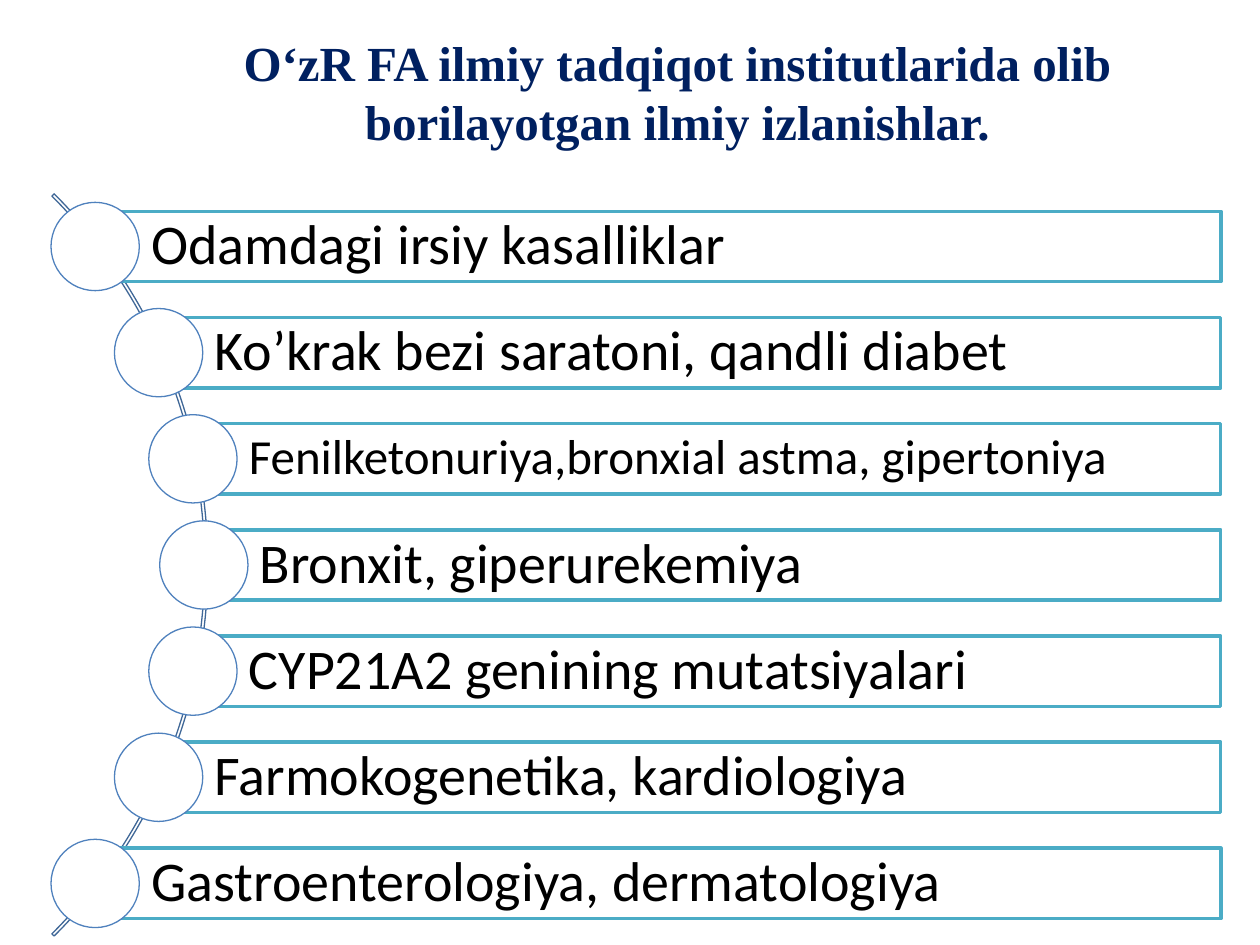
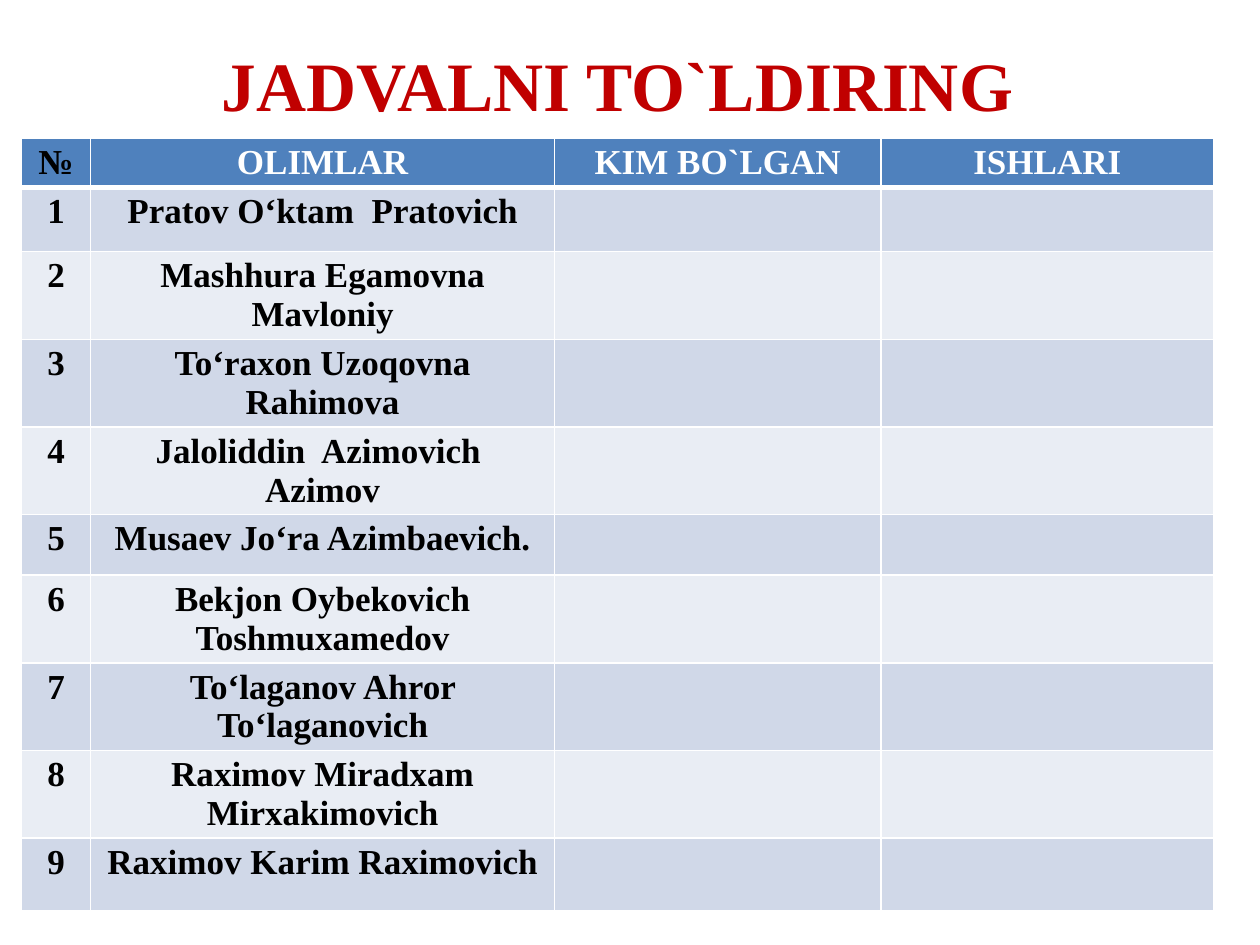
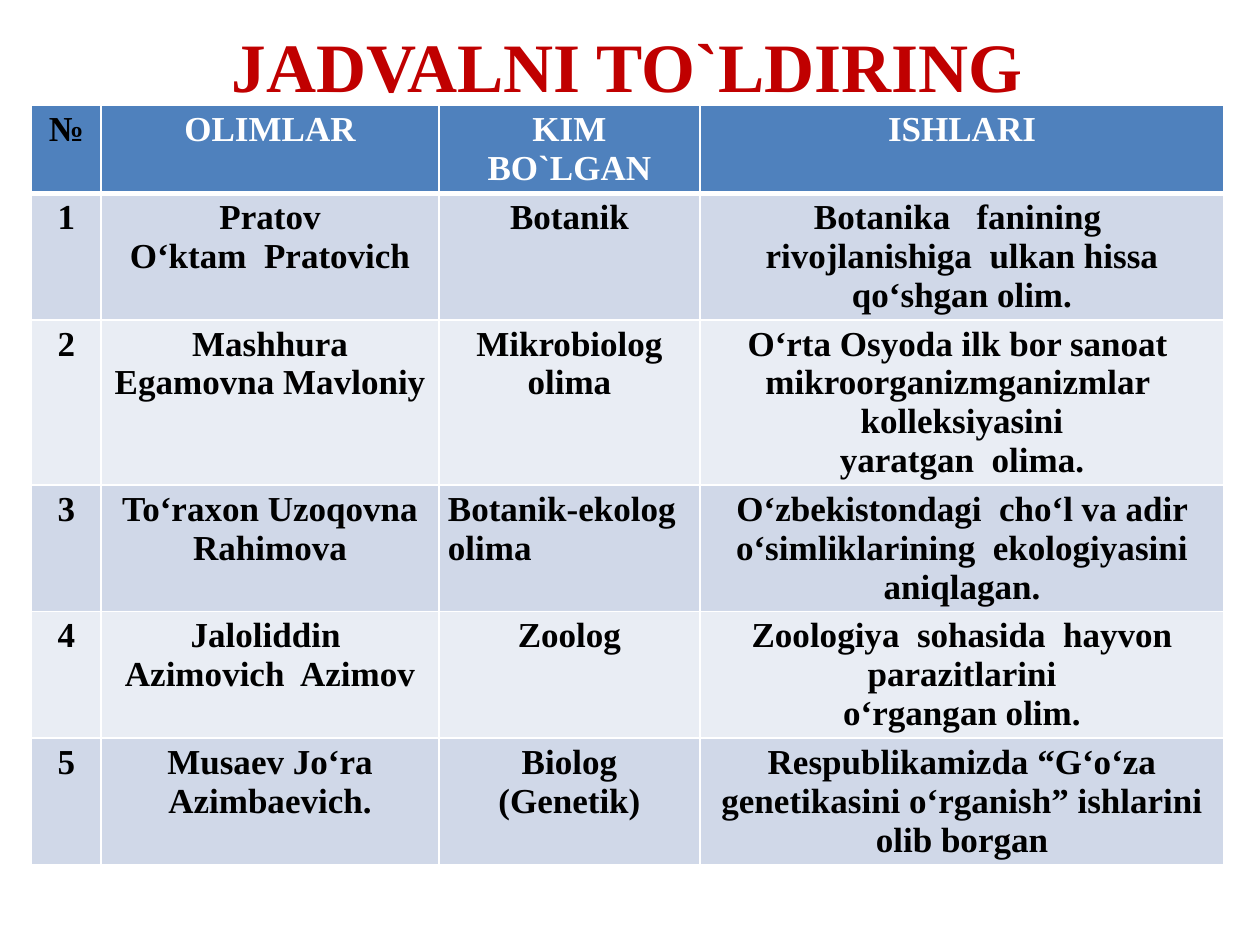
import math

import pptx
import pptx.dml.color
import pptx.enum.shapes
import pptx.enum.text
import pptx.oxml
import pptx.oxml.ns
import pptx.util

Cm = pptx.util.Cm
Pt = pptx.util.Pt
SHAPE = pptx.enum.shapes.MSO_SHAPE
ALIGN = pptx.enum.text.PP_ALIGN
MIDDLE = pptx.enum.text.MSO_ANCHOR.MIDDLE

WHITE, BLACK, NAVY, RED = "FFFFFF", "000000", "002060", "C00000"
HEADER_BLUE, BANDS = "4F81BD", ("D0D8E8", "E9EDF4")
BAR_LINE, ARC_LINE = "4BACC6", "3F6797"
SERIF, SANS = "Times New Roman", "Calibri"

TABLE_TITLE = "JADVALNI TO`LDIRING"
HEADINGS = ("№", "OLIMLAR", "KIM BO`LGAN", "ISHLARI")
TOPICS = (
    "Odamdagi irsiy kasalliklar",
    "Ko’krak bezi saratoni, qandli diabet",
    "Fenilketonuriya,bronxial astma, gipertoniya",
    "Bronxit, giperurekemiya",
    "CYP21A2 genining mutatsiyalari",
    "Farmokogenetika, kardiologiya",
    "Gastroenterologiya, dermatologiya",
)
SCHOLARS = (
    "Pratov O‘ktam  Pratovich",
    "Mashhura Egamovna Mavloniy",
    "To‘raxon Uzoqovna Rahimova",
    "Jaloliddin  Azimovich  Azimov",
    "Musaev Jo‘ra Azimbaevich.",
    "Bekjon Oybekovich Toshmuxamedov",
    "To‘laganov Ahror To‘laganovich",
    "Raximov Miradxam Mirxakimovich",
    "Raximov Karim Raximovich",
)
NARROW_SCHOLARS = ("Pratov\nO‘ktam  Pratovich", *SCHOLARS[1:5])
PROFESSIONS = (
    "Botanik",
    "Mikrobiolog olima",
    "Botanik-ekolog  olima",
    "Zoolog",
    "Biolog (Genetik)",
)
WORKS = (
    "Botanika   fanining  rivojlanishiga  ulkan hissa qo‘shgan olim.",
    "O‘rta Osyoda ilk bor sanoat  mikroorganizmganizmlar  kolleksiyasini\n"
    "yaratgan  olima.",
    "O‘zbekistondagi  cho‘l va adir o‘simliklarining  ekologiyasini aniqlagan.",
    "Zoologiya  sohasida  hayvon parazitlarini\no‘rgangan olim.",
    "Respublikamizda “G‘o‘za genetikasini o‘rganish” ishlarini olib borgan",
)

# Topic list geometry in centimetres: circle centres lie on one arc.
ARC_X, ARC_Y, ARC_RADIUS, ARC_SIZE = -6.39, 11.39, 10.5, 21.16
TOPIC_STEP, CIRCLE, BAR_HEIGHT, BAR_RIGHT = 2.14, 1.78, 1.42, 24.61


def color(value):
    return pptx.dml.color.RGBColor.from_string(value)


def set_values(target, values):
    for name, value in values.items():
        setattr(target, name, value)


def write(frame, text, font, size, ink, bold=False, align=ALIGN.CENTER):
    """Fill a text frame, one paragraph for each line of text."""
    frame.text = text
    for para in frame.paragraphs:
        para.alignment = align
        for span in para.runs:
            set_values(span.font, {"name": font, "size": Pt(size), "bold": bold})
            span.font.color.rgb = color(ink)


def add_page(deck, title, box, size, ink):
    page = deck.slides.add_slide(deck.slide_layouts[5])
    heading = page.shapes.title
    set_values(heading, dict(zip(("left", "top", "width", "height"), map(Cm, box))))
    write(heading.text_frame, title, SERIF, size, ink, bold=True)
    set_values(heading.text_frame, {
        "vertical_anchor": MIDDLE,
        "word_wrap": True,
        "auto_size": pptx.enum.text.MSO_AUTO_SIZE.NONE,
    })
    return page


def add_outlined(page, kind, box, line, weight, fill=None):
    shape = page.shapes.add_shape(kind, *map(Cm, box))
    shape.shadow.inherit = False
    if fill:
        shape.fill.solid()
        shape.fill.fore_color.rgb = color(fill)
    else:
        shape.fill.background()
    shape.line.color.rgb = color(line)
    shape.line.width = Pt(weight)
    return shape


def add_arc(page):
    corner = (ARC_X - ARC_SIZE / 2, ARC_Y - ARC_SIZE / 2)
    arc = add_outlined(page, SHAPE.BLOCK_ARC, (*corner, ARC_SIZE, ARC_SIZE),
                       ARC_LINE, 0.75)
    for index, value in enumerate((189, 27, 0.003)):
        arc.adjustments[index] = value


def add_topic(page, text, offset):
    """Add a bar and its circle, offset in centimetres from the arc's middle."""
    x = ARC_X + math.sqrt(ARC_RADIUS ** 2 - offset ** 2)
    y = ARC_Y + offset
    bar = add_outlined(page, SHAPE.RECTANGLE,
                       (x, y - BAR_HEIGHT / 2, BAR_RIGHT - x, BAR_HEIGHT),
                       BAR_LINE, 2, WHITE)
    size = 28 if len(text) > 40 else 32
    write(bar.text_frame, text, SANS, size, BLACK, align=ALIGN.LEFT)
    bar.text_frame.paragraphs[0].line_spacing = 0.9
    set_values(bar.text_frame, {
        "vertical_anchor": MIDDLE,
        "word_wrap": True,
        "margin_left": Cm(1.13),
        "margin_right": Cm(0.22),
        "margin_top": Cm(0.22),
        "margin_bottom": Cm(0.22),
    })
    add_outlined(page, SHAPE.OVAL,
                 (x - CIRCLE / 2, y - CIRCLE / 2, CIRCLE, CIRCLE),
                 HEADER_BLUE, 0.75, WHITE)


def set_borders(cell, weights):
    """Draw white cell borders, with a weight in points for each side."""
    properties = cell._tc.get_or_add_tcPr()
    for side, weight in weights.items():
        properties.append(pptx.oxml.parse_xml(
            f'<a:ln{side} {pptx.oxml.ns.nsdecls("a")} w="{Pt(weight)}">'
            f'<a:solidFill><a:srgbClr val="{WHITE}"/></a:solidFill></a:ln{side}>'))


def add_scholar_table(page, left, top, widths, heights, records):
    rows = [HEADINGS, *records]
    table = page.shapes.add_table(len(rows), len(widths), Cm(left), Cm(top),
                                  Cm(sum(widths)), Cm(sum(heights))).table
    for column, width in zip(table.columns, widths):
        column.width = Cm(width)
    for row, (height, values) in enumerate(zip(heights, rows)):
        table.rows[row].height = Cm(height)
        for column, text in enumerate(values):
            cell = table.cell(row, column)
            set_borders(cell, {"L": 1, "R": 1, "T": 3 if row == 1 else 1,
                               "B": 3 if row == 0 else 1})
            cell.fill.solid()
            cell.fill.fore_color.rgb = color(BANDS[(row - 1) % 2] if row else HEADER_BLUE)
            set_values(cell, {"margin_left": Cm(0.18), "margin_right": Cm(0.18),
                              "margin_top": Cm(0.1), "margin_bottom": Cm(0.1)})
            if text:
                ink = WHITE if row == 0 and column else BLACK
                align = ALIGN.LEFT if text == PROFESSIONS[2] else ALIGN.CENTER
                write(cell.text_frame, text, SERIF, 20, ink, bold=True, align=align)


def add_research_page(deck):
    page = add_page(
        deck,
        "O‘zR FA ilmiy tadqiqot institutlarida olib borilayotgan ilmiy izlanishlar.",
        (2.49, 0.76, 22.33, 2.16), 28, NAVY)
    add_arc(page)
    for index, topic in enumerate(TOPICS):
        add_topic(page, topic, (index - len(TOPICS) // 2) * TOPIC_STEP)


def add_exercise_page(deck):
    page = add_page(deck, TABLE_TITLE, (1.5, 1.12, 21.9, 1.14), 39.6, RED)
    records = [(str(number), name, "", "") for number, name in enumerate(SCHOLARS, 1)]
    heights = [0.94, 1.3, *[1.75] * 3, 1.22, *[1.75] * 3, 1.46]
    add_scholar_table(page, 0.43, 2.79, (1.4, 9.35, 6.58, 6.71), heights, records)


def add_answer_page(deck):
    page = add_page(deck, TABLE_TITLE, (1.7, 0.74, 21.9, 1.14), 39.6, RED)
    records = [(str(number), *values) for number, values in
               enumerate(zip(NARROW_SCHOLARS, PROFESSIONS, WORKS), 1)]
    heights = [1.73, 2.54, 3.33, *[2.54] * 3]
    add_scholar_table(page, 0.64, 2.13, (1.4, 6.81, 5.26, 10.57), heights, records)


def main():
    deck = pptx.Presentation()
    set_values(deck, {"slide_width": Cm(25.4), "slide_height": Cm(19.05)})
    add_research_page(deck)
    add_exercise_page(deck)
    add_answer_page(deck)
    deck.save("out.pptx")


if __name__ == "__main__":
    main()
